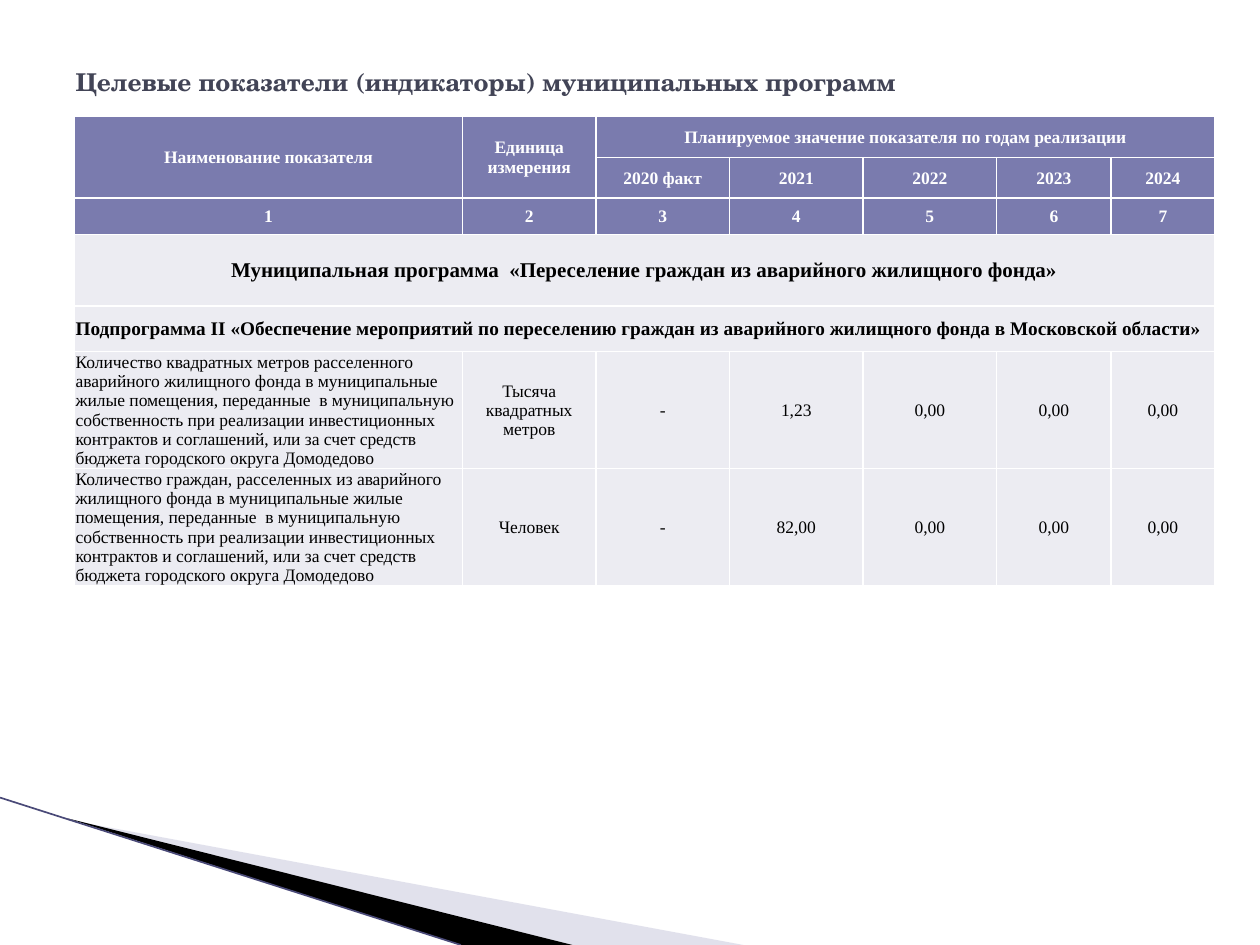
from lxml import etree
from pptx import Presentation, util as u
from pptx.dml.color import RGBColor
from pptx.enum import shapes, text
from pptx.oxml import ns

WIDTH, HEIGHT = 10, 7.5
SERIF = "Times New Roman"
WHITE, BLACK = "FFFFFF", "000000"
HEADER_FILL, BODY_FILL = "7A7BAE", "ECECF2"
COLUMNS = [3.08, 1.06, 1.06, 1.06, 1.06, 0.91, 0.82]
ROWS = [0.33, 0.32, 0.29, 0.57, 0.36, 0.93, 0.93]
HEADER_ROWS = 3
HOUSING_TAIL = (
    "переданные  в муниципальную собственность при реализации инвестиционных "
    "контрактов и соглашений, или за счет средств бюджета городского округа Домодедово"
)
CELLS = [
    ["Наименование показателя", "Единица измерения",
     "Планируемое значение показателя по годам реализации"],
    ["", "", "2020 факт", "2021", "2022", "2023", "2024"],
    [str(number) for number in range(1, 8)],
    ["Муниципальная программа  «Переселение граждан из аварийного жилищного фонда»"],
    ["Подпрограмма II «Обеспечение мероприятий по переселению граждан "
     "из аварийного жилищного фонда в Московской области»"],
    ["Количество квадратных метров расселенного аварийного жилищного фонда "
     "в муниципальные жилые помещения, " + HOUSING_TAIL,
     "Тысяча квадратных метров", "-", "1,23", "0,00", "0,00", "0,00"],
    ["Количество граждан, расселенных из аварийного жилищного фонда "
     "в муниципальные жилые помещения, " + HOUSING_TAIL,
     "Человек", "-", "82,00", "0,00", "0,00", "0,00"],
]
MERGES = [((0, 0), (1, 0)), ((0, 1), (1, 1)), ((0, 2), (0, 6)),
          ((3, 0), (3, 6)), ((4, 0), (4, 6))]


def rgb(value):
    return RGBColor.from_string(value)


def write(frame, words, size=10, font=SERIF, color=BLACK, bold=False,
          align=text.PP_ALIGN.LEFT):
    paragraph = frame.paragraphs[0]
    paragraph.alignment = align
    run = paragraph.add_run()
    run.text = words
    run.font.size = u.Pt(size)
    run.font.name = font
    run.font.bold = bold
    run.font.color.rgb = rgb(color)


def add_wedge(slide, box, points, color, alpha=None):
    """Fill a polygon whose points are shares of the box."""
    left, top, width, height = box
    corners = [(u.Inches(left + x * width), u.Inches(top + y * height)) for x, y in points]
    builder = slide.shapes.build_freeform(*corners[0])
    builder.add_line_segments(corners[1:], close=True)
    wedge = builder.convert_to_shape()
    wedge.shadow.inherit = False
    wedge.line.fill.background()
    wedge.fill.solid()
    wedge.fill.fore_color.rgb = rgb(color)
    if alpha:
        tint = wedge.fill._xPr.find(".//" + ns.qn("a:srgbClr"))
        etree.SubElement(tint, ns.qn("a:alpha"), val=str(alpha * 1000))


def add_corner(slide, box):
    left, top, width, height = box
    add_wedge(slide, box, [(0.09, 0.15), (1, 1), (0.77, 1)], "B6B6D1", alpha=40)
    add_wedge(slide, box, [(0.09, 0.14), (0.77, 1), (0.62, 1)], BLACK)
    edge = slide.shapes.add_connector(
        shapes.MSO_CONNECTOR.STRAIGHT, u.Inches(left), u.Inches(top),
        u.Inches(left + 0.62 * width), u.Inches(top + height))
    edge.line.color.rgb = rgb("4A4A78")
    edge.line.width = u.Pt(0.95)
    etree.SubElement(edge._element.spPr, ns.qn("a:effectLst"))


def add_title(slide, box, words):
    title = slide.shapes.title
    title.left, title.top, title.width, title.height = map(u.Inches, box)
    title.text_frame.vertical_anchor = text.MSO_ANCHOR.MIDDLE
    write(title.text_frame, words, size=14, font="TeX Gyre Schola",
          color="424456", bold=True)


def format_cell(cell, fill):
    cell.margin_left = cell.margin_right = cell.margin_top = u.Inches(0.01)
    cell.margin_bottom = 0
    cell.vertical_anchor = text.MSO_ANCHOR.MIDDLE
    properties = cell._tc.get_or_add_tcPr()
    for side in ("lnL", "lnR", "lnT", "lnB"):
        border = etree.SubElement(properties, ns.qn("a:" + side), w=str(u.Pt(1)))
        solid = etree.SubElement(border, ns.qn("a:solidFill"))
        etree.SubElement(solid, ns.qn("a:srgbClr"), val=WHITE)
    cell.fill.solid()
    cell.fill.fore_color.rgb = rgb(fill)


def cell_style(row, column):
    """Text format by place: header, programme, subprogramme or indicator."""
    center = text.PP_ALIGN.CENTER
    if row < HEADER_ROWS:
        return dict(color=WHITE, bold=True, align=center)
    if row == 3:
        return dict(size=12, bold=True, align=center)
    if row == 4:
        return dict(size=11, bold=True)
    return dict(align=center if column else text.PP_ALIGN.LEFT)


def add_indicators(slide, left, top):
    box = map(u.Inches, (left, top, sum(COLUMNS), sum(ROWS)))
    table = slide.shapes.add_table(len(ROWS), len(COLUMNS), *box).table
    for column, width in zip(table.columns, COLUMNS):
        column.width = u.Inches(width)
    for row, height in zip(table.rows, ROWS):
        row.height = u.Inches(height)
    for row in range(len(ROWS)):
        for column in range(len(COLUMNS)):
            format_cell(table.cell(row, column),
                        HEADER_FILL if row < HEADER_ROWS else BODY_FILL)
    for first, last in MERGES:
        table.cell(*first).merge(table.cell(*last))
    for row, words_in_row in enumerate(CELLS):
        for column, words in enumerate(words_in_row):
            if words:
                write(table.cell(row, column).text_frame, words, **cell_style(row, column))
    for row in (5, 6):
        table.cell(row, 0).vertical_anchor = text.MSO_ANCHOR.TOP


def main():
    presentation = Presentation()
    presentation.slide_width, presentation.slide_height = u.Inches(WIDTH), u.Inches(HEIGHT)
    slide = presentation.slides.add_slide(presentation.slide_layouts[5])
    add_corner(slide, (0, 6.33, 0.59 * WIDTH, HEIGHT - 6.33))
    add_title(slide, (0.5, 0.3, 0.9 * WIDTH, 0.69),
              "Целевые показатели (индикаторы) муниципальных программ")
    add_indicators(slide, 0.59, 0.92)
    presentation.save("out.pptx")


if __name__ == "__main__":
    main()
